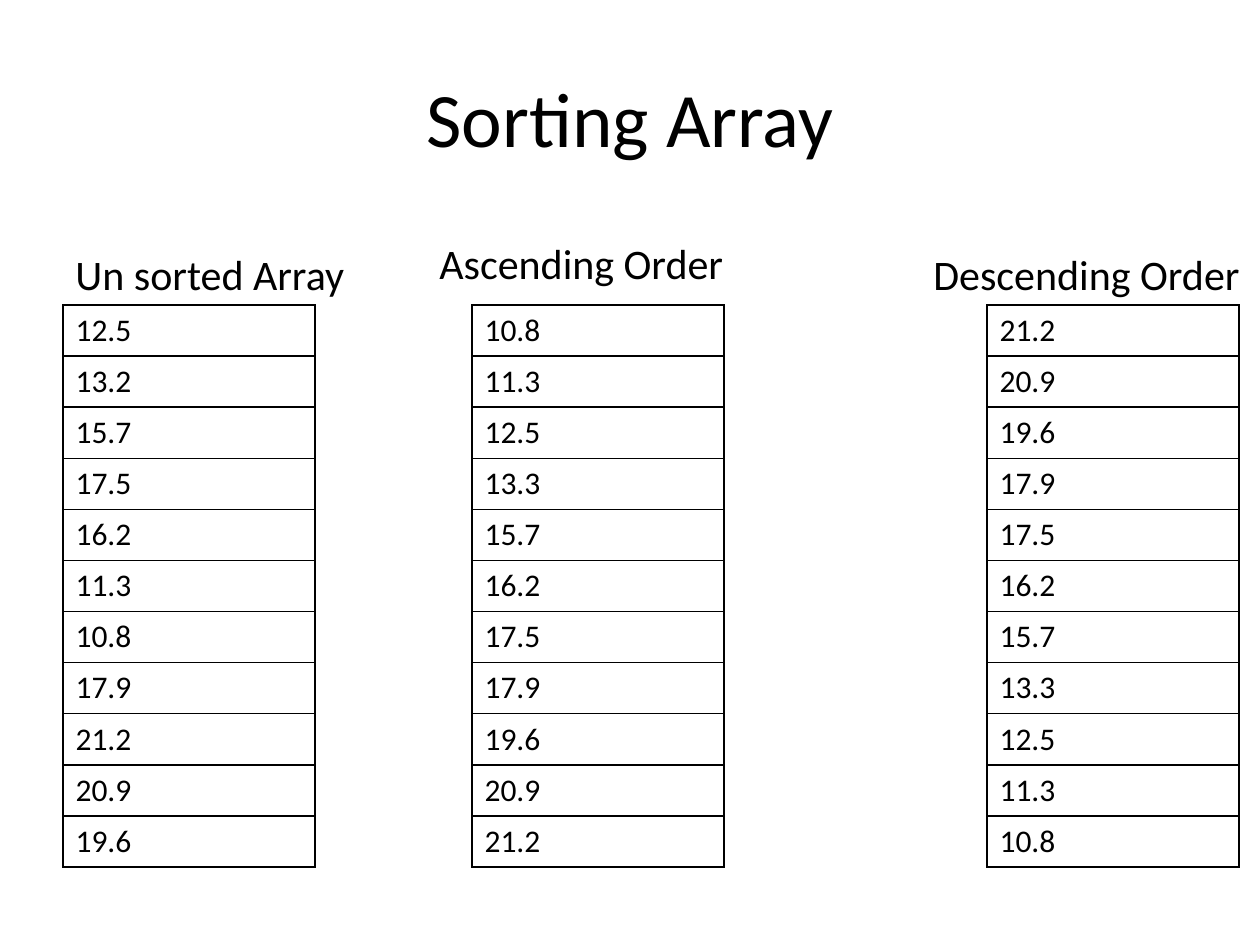
from lxml.etree import SubElement
from pptx import Presentation
from pptx.dml.color import RGBColor
from pptx.enum.text import MSO_ANCHOR, MSO_AUTO_SIZE, PP_ALIGN
from pptx.oxml.ns import qn
from pptx.util import Emu, Pt

BLACK = RGBColor(0x00, 0x00, 0x00)
FONT = "Calibri"
PIXELS_PER_INCH = 126
TABLE_TOP = 305
TABLE_WIDTH = 252
ROW_HEIGHT = 51
LABEL_HEIGHT = 63

UNSORTED = ["12.5", "13.2", "15.7", "17.5", "16.2", "11.3",
            "10.8", "17.9", "21.2", "20.9", "19.6"]
ASCENDING = ["10.8", "11.3", "12.5", "13.3", "15.7", "16.2",
             "17.5", "17.9", "19.6", "20.9", "21.2"]
DESCENDING = ASCENDING[::-1]


def px(length):
    return Emu(round(length * 914400 / PIXELS_PER_INCH))


def place(shape, left, top, width, height):
    shape.left, shape.top = px(left), px(top)
    shape.width, shape.height = px(width), px(height)


def write(frame, text, size=18, align=PP_ALIGN.LEFT):
    para = frame.paragraphs[0]
    para.alignment = align
    span = para.add_run()
    span.text = text
    span.font.name = FONT
    span.font.size = Pt(size)
    span.font.color.rgb = BLACK


def add_borders(cell):
    properties = cell._tc.get_or_add_tcPr()
    for side in ("a:lnL", "a:lnR", "a:lnT", "a:lnB"):
        line = SubElement(properties, qn(side), w=str(Pt(1)))
        fill = SubElement(line, qn("a:solidFill"))
        SubElement(fill, qn("a:srgbClr"), val=str(BLACK))


def add_title(page, text, left, top, width, height):
    title = page.shapes.title
    place(title, left, top, width, height)
    title.text_frame.vertical_anchor = MSO_ANCHOR.MIDDLE
    write(title.text_frame, text, size=44, align=PP_ALIGN.CENTER)


def add_label(page, text, left, top, width):
    box = page.shapes.add_textbox(px(left), px(top), px(width), px(LABEL_HEIGHT))
    box.text_frame.word_wrap = False
    box.text_frame.auto_size = MSO_AUTO_SIZE.SHAPE_TO_FIT_TEXT
    write(box.text_frame, text, size=24)


def add_array(page, values, left, top, width):
    height = ROW_HEIGHT * len(values)
    table = page.shapes.add_table(
        len(values), 1, px(left), px(top), px(width), px(height)).table
    table.first_row = False
    table.horz_banding = False
    for row, value in zip(table.rows, values):
        row.height = px(ROW_HEIGHT)
        cell = row.cells[0]
        add_borders(cell)
        cell.fill.background()
        write(cell.text_frame, value)


def main():
    deck = Presentation()
    deck.slide_width, deck.slide_height = px(1260), px(945)
    page = deck.slides.add_slide(deck.slide_layouts[5])
    add_title(page, "Sorting Array", 63, 38, 1134, 157)
    for values, left in ((UNSORTED, 63), (ASCENDING, 472), (DESCENDING, 987)):
        add_array(page, values, left, TABLE_TOP, TABLE_WIDTH)
    add_label(page, "Un sorted Array", 63, 242, 297)
    add_label(page, "Ascending Order", 427, 231, 312)
    add_label(page, "Descending Order", 921, 242, 335)
    deck.save("out.pptx")


if __name__ == "__main__":
    main()
